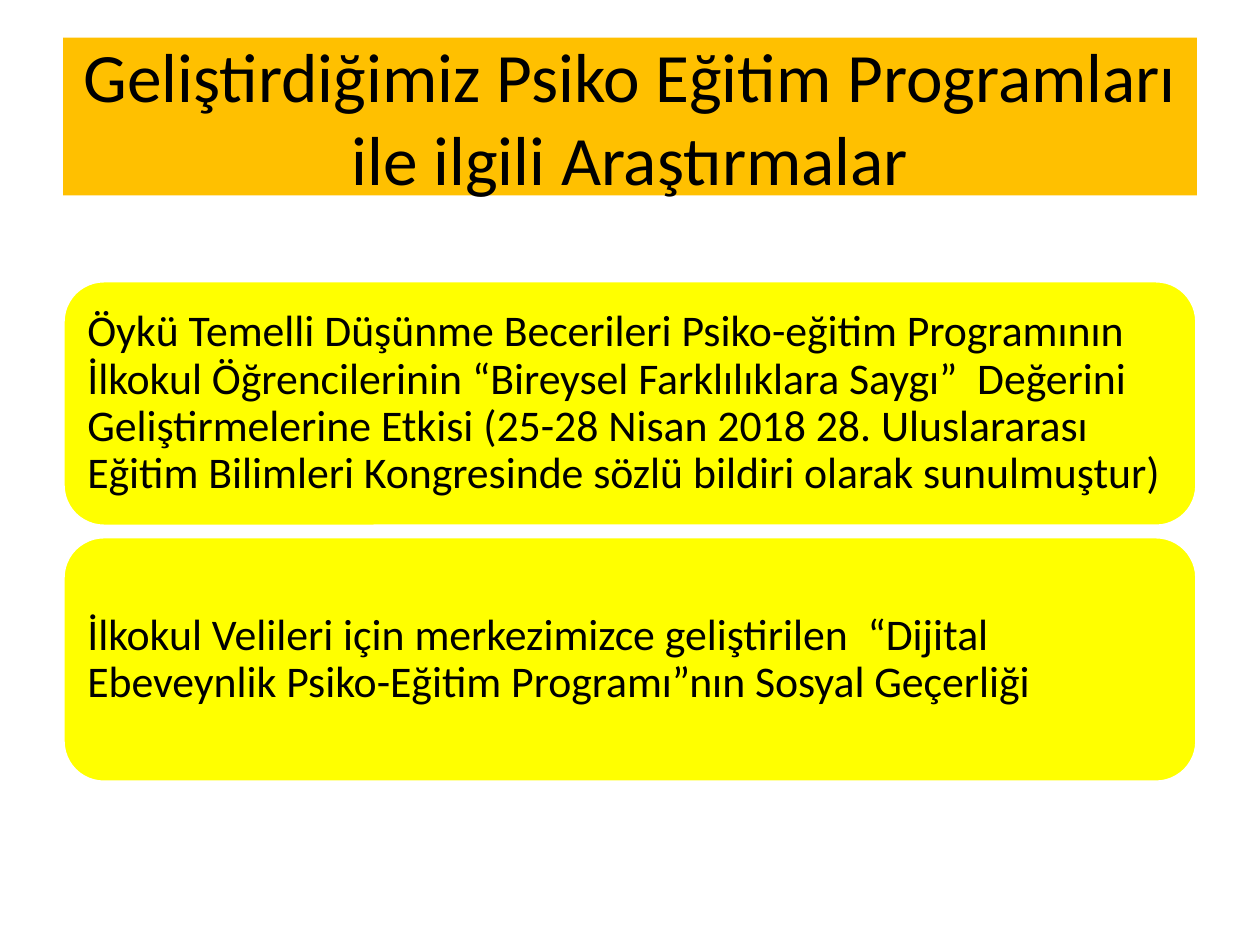
"""Builds a slide with a title band and two rounded cards about psycho-education research."""
from pptx import Presentation
from pptx.dml.color import RGBColor
from pptx.enum.shapes import MSO_SHAPE
from pptx.enum.text import MSO_ANCHOR, MSO_AUTO_SIZE, PP_ALIGN
from pptx.util import Cm, Pt

COLOURS = {"band": "FFC000", "card": "FFFF00", "outline": "FFFFFF", "text": "000000"}

TITLE = "Geliştirdiğimiz Psiko Eğitim Programları ile ilgili Araştırmalar"
STUDIES = [
    "Öykü Temelli Düşünme Becerileri Psiko-eğitim Programının İlkokul Öğrencilerinin "
    "“Bireysel Farklılıklara Saygı”  Değerini Geliştirmelerine Etkisi (25-28 Nisan 2018 "
    "28. Uluslararası Eğitim Bilimleri Kongresinde sözlü bildiri olarak sunulmuştur)",
    "İlkokul Velileri için merkezimizce geliştirilen  “Dijital Ebeveynlik "
    "Psiko-Eğitim Programı”nın Sosyal Geçerliği",
]

LEFT, WIDTH = 1.27, 22.86
CARD_TOP, CARD_HEIGHT, CARD_GAP = 5.66, 4.95, 0.21


class SlideBuilder:
    def __init__(self, slide, font="Calibri"):
        self.slide = slide
        self.font = font

    def colour(self, name):
        return RGBColor.from_string(COLOURS[name])

    def fill(self, shape, name):
        shape.fill.solid()
        shape.fill.fore_color.rgb = self.colour(name)

    def add_text(self, shape, text, size, alignment, spacing):
        frame = shape.text_frame
        frame.word_wrap = True
        frame.auto_size = MSO_AUTO_SIZE.NONE
        frame.vertical_anchor = MSO_ANCHOR.MIDDLE
        paragraph = frame.paragraphs[0]
        paragraph.alignment = alignment
        paragraph.line_spacing = spacing
        run = paragraph.add_run()
        run.text = text
        run.font.name = self.font
        run.font.size = Pt(size)
        run.font.color.rgb = self.colour("text")

    def title(self, text, top, height):
        shape = self.slide.shapes.title
        shape.left, shape.top = Cm(LEFT), Cm(top)
        shape.width, shape.height = Cm(WIDTH), Cm(height)
        self.fill(shape, "band")
        self.add_text(shape, text, 39.6, PP_ALIGN.CENTER, 1.0)

    def card(self, text, top):
        shape = self.slide.shapes.add_shape(
            MSO_SHAPE.ROUNDED_RECTANGLE, Cm(LEFT), Cm(top), Cm(WIDTH), Cm(CARD_HEIGHT)
        )
        shape.shadow.inherit = False
        self.fill(shape, "card")
        shape.line.color.rgb = self.colour("outline")
        shape.line.width = Pt(2)
        frame = shape.text_frame
        frame.margin_left = frame.margin_right = Cm(0.25)
        frame.margin_top = frame.margin_bottom = Cm(0.25)
        self.add_text(shape, text, 25, PP_ALIGN.LEFT, 0.9)


def main():
    presentation = Presentation()
    presentation.slide_width, presentation.slide_height = Cm(25.4), Cm(19.05)
    builder = SlideBuilder(presentation.slides.add_slide(presentation.slide_layouts[5]))
    builder.title(TITLE, 0.76, 3.18)
    for index, study in enumerate(STUDIES):
        builder.card(study, CARD_TOP + index * (CARD_HEIGHT + CARD_GAP))
    presentation.save("out.pptx")


if __name__ == "__main__":
    main()
